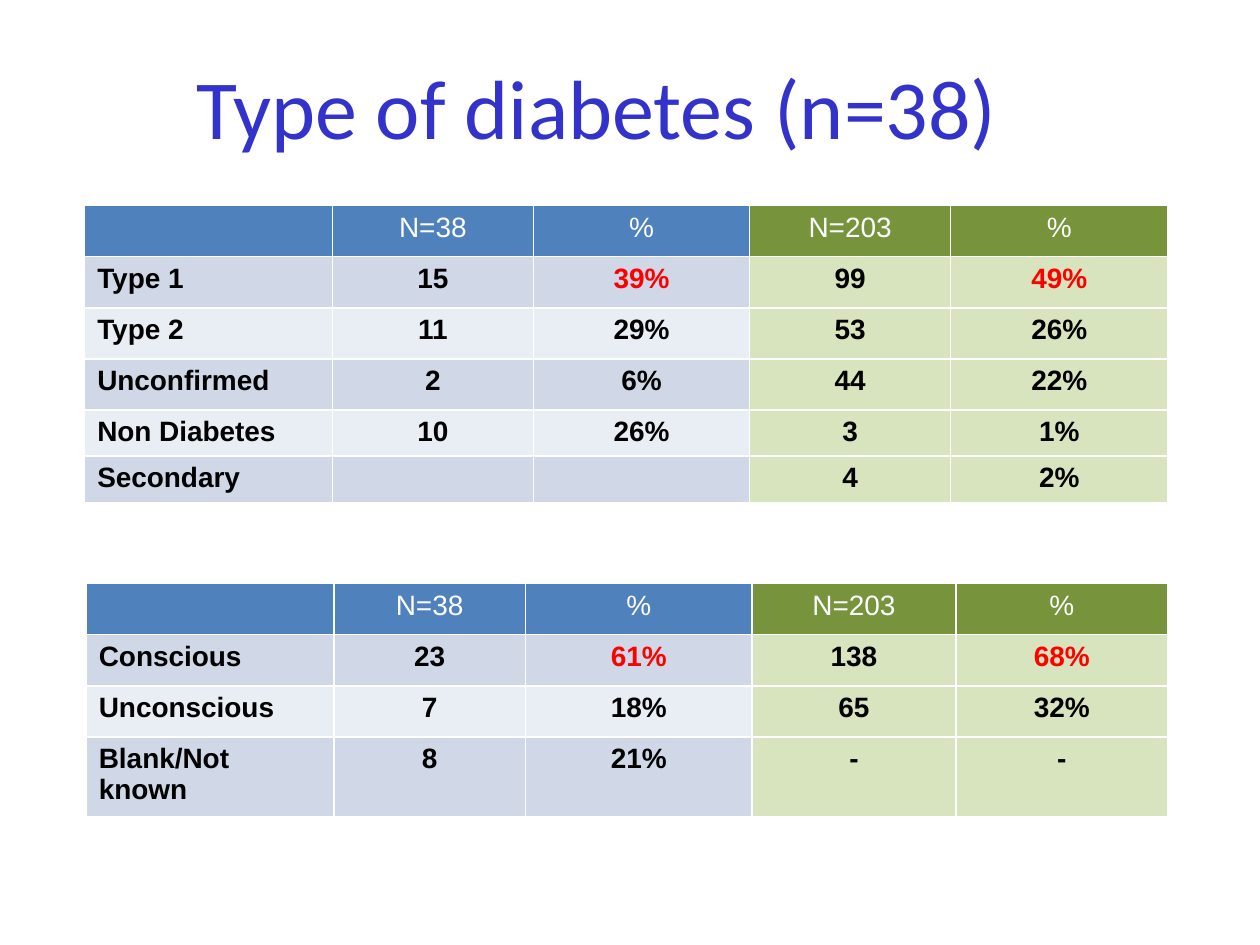
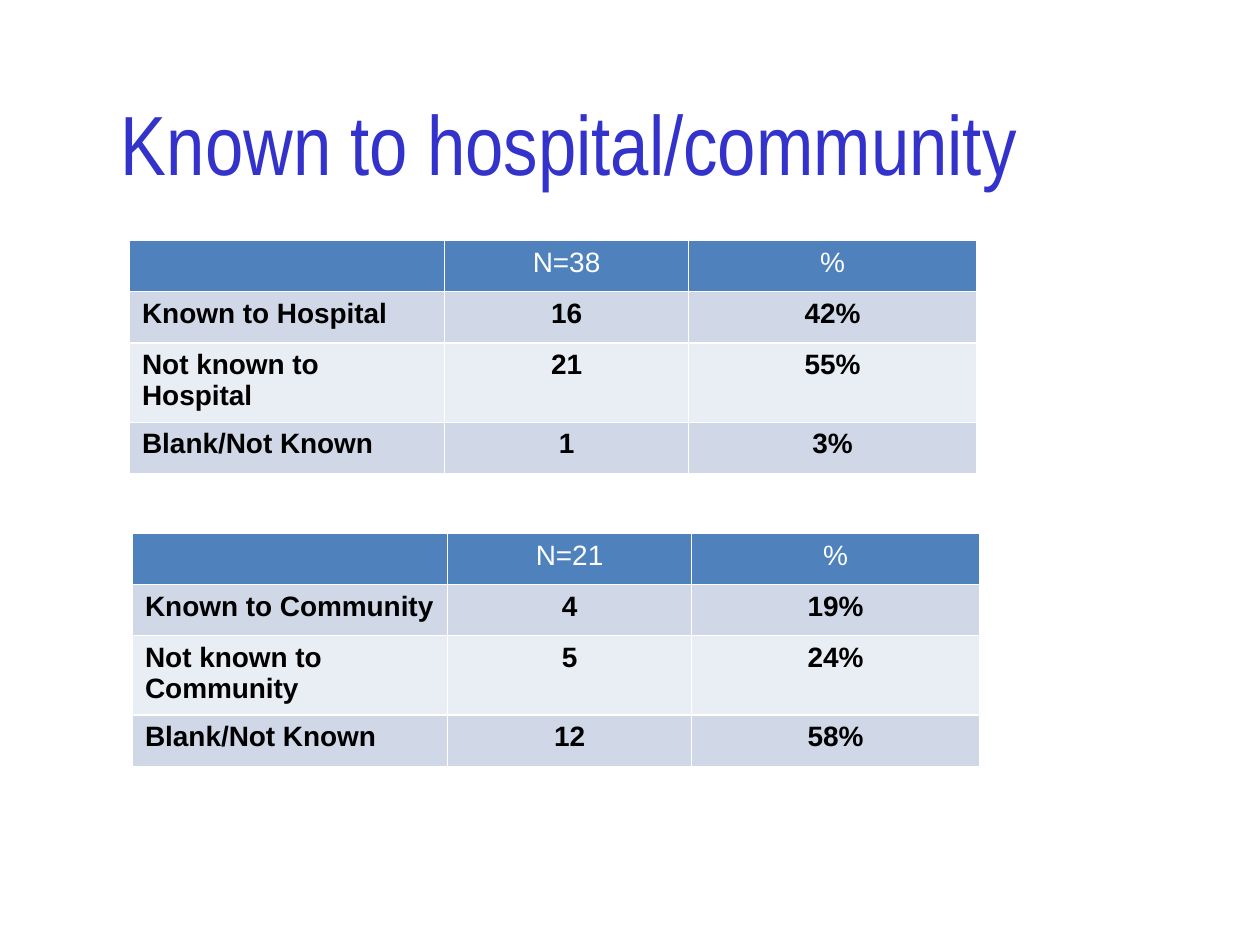
from lxml.etree import SubElement
from pptx import Presentation
from pptx.dml.color import RGBColor
from pptx.enum.text import MSO_ANCHOR, MSO_AUTO_SIZE, PP_ALIGN
from pptx.oxml.ns import qn
from pptx.util import Pt

COLOURS = {
    "title": "3333CC",
    "white": "FFFFFF",
    "text": "000000",
    "highlight": "FF0000",
    "blue_header": "4F81BD",
    "blue_odd": "D0D8E8",
    "blue_even": "E9EDF4",
    "green_header": "77933C",
    "green_body": "D7E4BD",
}
ROW, SHORT_ROW, TALL_ROW = 29.2, 26.2, 45.4
COHORT_HEADER = ["", "N=38", "%", "N=203", "%"]
KNOWN_COLUMNS = [180, 139.5, 164.5]
KNOWN_ROWS = [ROW, ROW, TALL_ROW, ROW]


class DeckBuilder:
    title_size = 48
    table_font = "Arial"
    table_size = 16
    border_width = 1
    first_green_column = 3

    def __init__(self):
        self.deck = Presentation()
        self.deck.slide_width = Pt(720)
        self.deck.slide_height = Pt(540)
        self.page = None

    def colour(self, name):
        return RGBColor.from_string(COLOURS[name])

    def add_page(self):
        self.page = self.deck.slides.add_slide(self.deck.slide_layouts[5])

    def add_span(self, para, text, font, size, colour, bold=False):
        span = para.add_run()
        span.text = text
        span.font.name = font
        span.font.size = Pt(size)
        span.font.bold = bold
        span.font.color.rgb = self.colour(colour)

    def add_title(self, text, place, font, align, anchor):
        box = self.page.shapes.title
        box.left, box.top, box.width, box.height = map(Pt, place)
        frame = box.text_frame
        frame.word_wrap = True
        frame.auto_size = MSO_AUTO_SIZE.NONE
        frame.vertical_anchor = anchor
        para = frame.paragraphs[0]
        para.alignment = align
        self.add_span(para, text, font, self.title_size, "title")

    def add_borders(self, cell):
        properties = cell._tc.get_or_add_tcPr()
        for side in ("a:lnL", "a:lnR", "a:lnT", "a:lnB"):
            line = SubElement(properties, qn(side), w=str(Pt(self.border_width)))
            fill = SubElement(line, qn("a:solidFill"))
            SubElement(fill, qn("a:srgbClr"), val=COLOURS["white"])

    def fill_name(self, row, column):
        if column >= self.first_green_column:
            return "green_body" if row else "green_header"
        if row == 0:
            return "blue_header"
        return "blue_odd" if row % 2 else "blue_even"

    def fill_cell(self, cell, text, row, column, colour):
        self.add_borders(cell)
        cell.fill.solid()
        cell.fill.fore_color.rgb = self.colour(self.fill_name(row, column))
        para = cell.text_frame.paragraphs[0]
        para.alignment = PP_ALIGN.CENTER if column else PP_ALIGN.LEFT
        if text:
            self.add_span(para, text, self.table_font, self.table_size, colour, row > 0)
        else:
            SubElement(para._p, qn("a:endParaRPr"), sz=str(self.table_size * 100))

    def add_table(self, left, top, widths, heights, rows, highlight_row=None):
        frame = self.page.shapes.add_table(
            len(rows), len(widths), Pt(left), Pt(top), Pt(sum(widths)), Pt(sum(heights)))
        table = frame.table
        for column, width in zip(table.columns, widths):
            column.width = Pt(width)
        for row, height in zip(table.rows, heights):
            row.height = Pt(height)
        for row, texts in enumerate(rows):
            for column, text in enumerate(texts):
                colour = "text" if row else "white"
                if row == highlight_row and text.endswith("%"):
                    colour = "highlight"
                self.fill_cell(table.cell(row, column), text, row, column, colour)


def build_diabetes_types(builder):
    builder.add_page()
    builder.add_title("Type of diabetes (n=38)", (51.8, 15.8, 578.2, 90),
                      "Calibri", PP_ALIGN.CENTER, MSO_ANCHOR.MIDDLE)
    builder.add_table(48.4, 117.5, [141.5, 115, 123.5, 115, 124], [ROW] * 4 + [SHORT_ROW] * 2, [
        COHORT_HEADER,
        ["Type 1", "15", "39%", "99", "49%"],
        ["Type 2", "11", "29%", "53", "26%"],
        ["Unconfirmed", "2", "6%", "44", "22%"],
        ["Non Diabetes", "10", "26%", "3", "1%"],
        ["Secondary", "", "", "4", "2%"],
    ], highlight_row=1)
    builder.add_table(49.3, 333.5, [141.5, 109.5, 129.5, 116.5, 121], [ROW] * 3 + [TALL_ROW], [
        COHORT_HEADER,
        ["Conscious", "23", "61%", "138", "68%"],
        ["Unconscious", "7", "18%", "65", "32%"],
        ["Blank/Not known", "8", "21%", "-", "-"],
    ], highlight_row=1)


def build_known_patients(builder):
    builder.add_page()
    builder.add_title("Known to hospital/community", (61.9, 46.1, 628.6, 67.7),
                      "Arial Narrow", PP_ALIGN.LEFT, MSO_ANCHOR.BOTTOM)
    builder.add_table(74, 137.5, KNOWN_COLUMNS, KNOWN_ROWS, [
        ["", "N=38", "%"],
        ["Known to Hospital", "16", "42%"],
        ["Not known to Hospital", "21", "55%"],
        ["Blank/Not Known", "1", "3%"],
    ])
    builder.add_table(75.7, 304.9, KNOWN_COLUMNS, KNOWN_ROWS, [
        ["", "N=21", "%"],
        ["Known to Community", "4", "19%"],
        ["Not known to Community", "5", "24%"],
        ["Blank/Not Known", "12", "58%"],
    ])


def main():
    builder = DeckBuilder()
    build_diabetes_types(builder)
    build_known_patients(builder)
    builder.deck.save("out.pptx")


if __name__ == "__main__":
    main()
